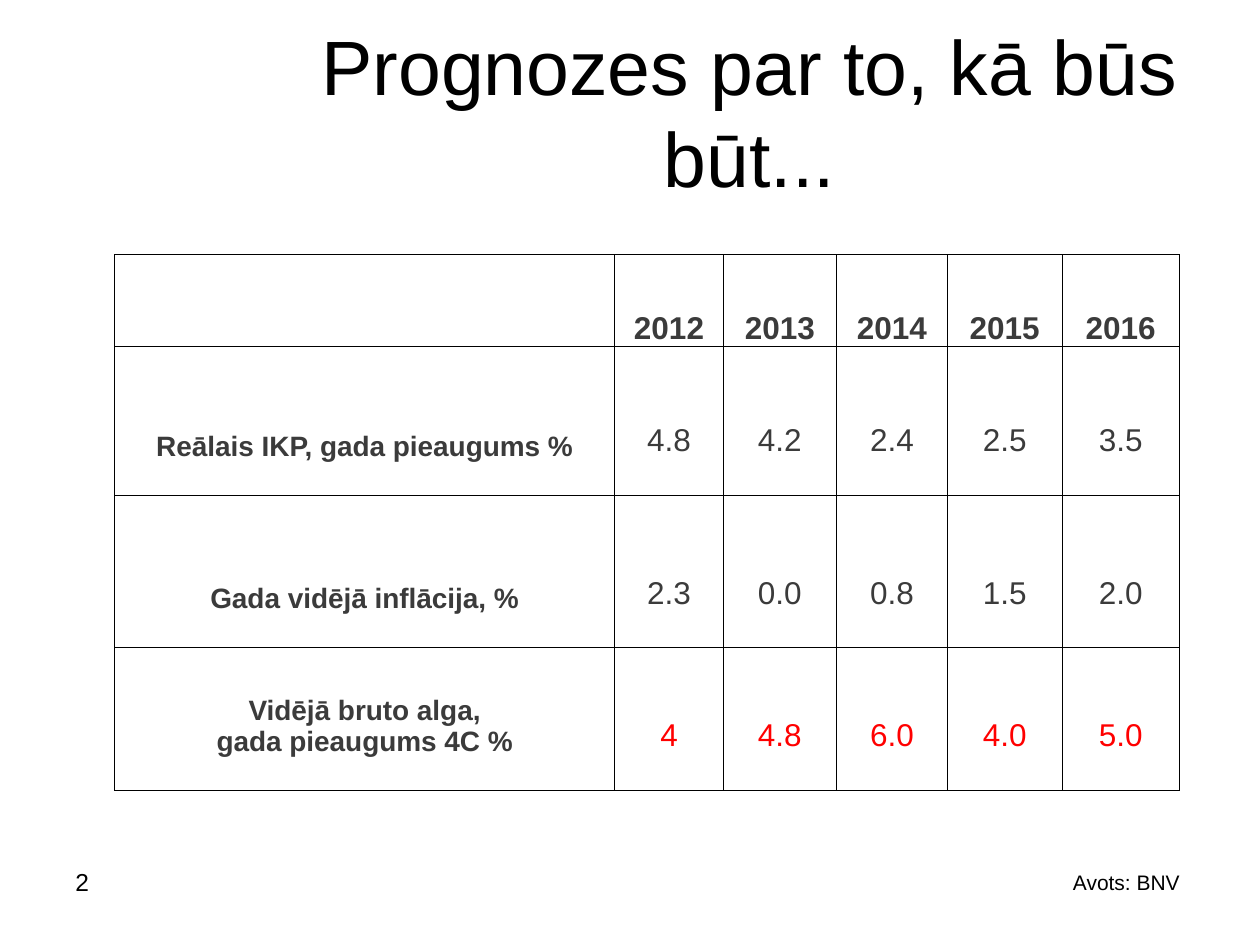
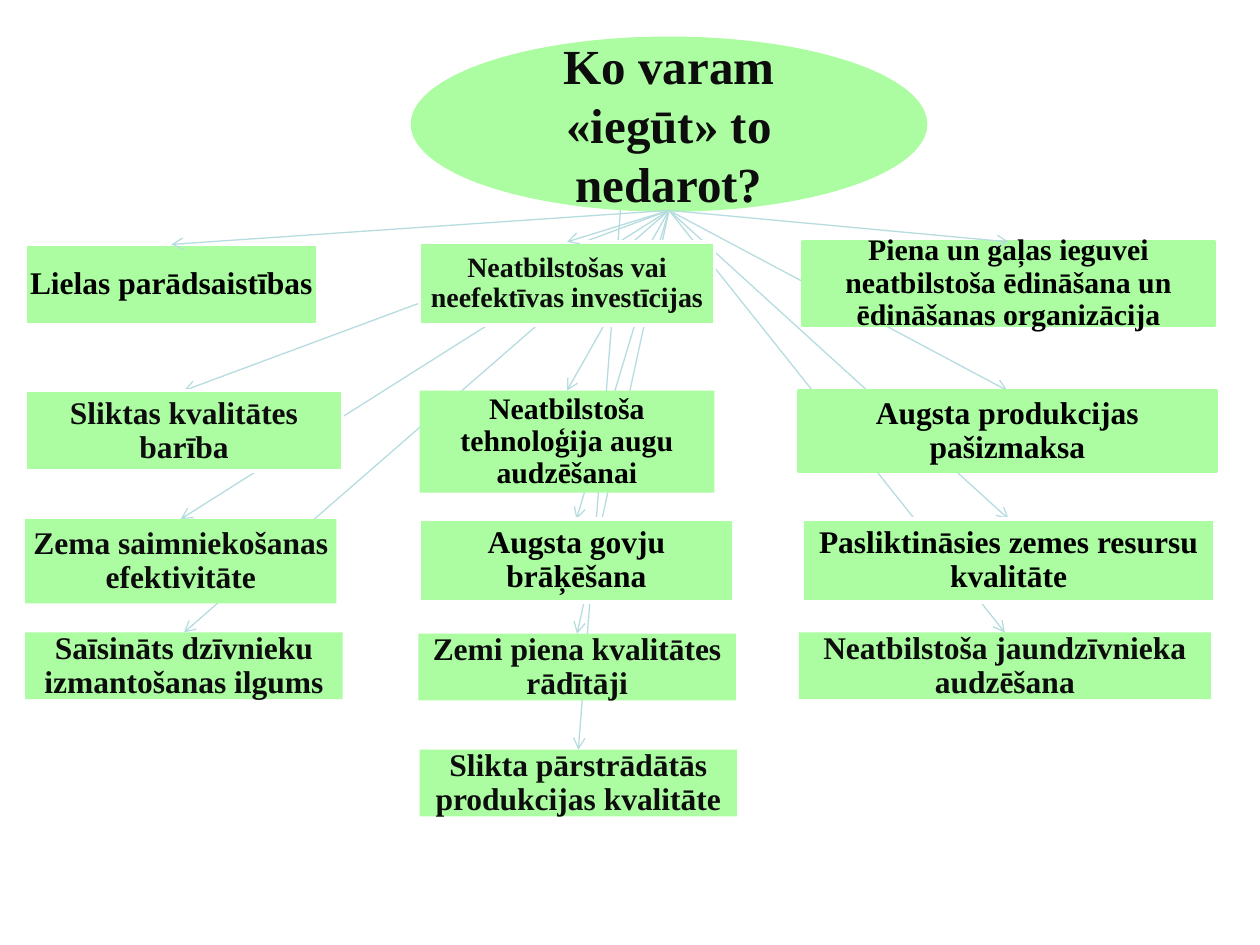
from dataclasses import dataclass

import pptx
import pptx.dml.color
import pptx.enum.shapes
import pptx.enum.text
import pptx.oxml
import pptx.oxml.ns
import pptx.util
from pptx.util import Inches

COLORS = {
    "black": "000000",
    "ink": "0D0D0D",
    "table_text": "3B3B3B",
    "highlight": "FF0000",
    "card": "ACFDA1",
    "arrow": "B6DCDF",
    "white": "FFFFFF",
}
SANS, SERIF = "Arial", "Times New Roman"
CENTER = pptx.enum.text.PP_ALIGN.CENTER
MIDDLE = pptx.enum.text.MSO_ANCHOR.MIDDLE
BOTTOM = pptx.enum.text.MSO_ANCHOR.BOTTOM
SHAPES = pptx.enum.shapes.MSO_SHAPE


@dataclass
class TextStyle:
    size: float
    color: str = "black"
    font: str = SANS
    bold: bool = False


@dataclass
class Card:
    text: str
    left: float
    top: float
    width: float
    height: float
    size: float = 18
    color: str = "black"
    border: str = ""
    arrow_start: tuple[float, float] = (5.31, 1.67)


YEARS = ["2012", "2013", "2014", "2015", "2016"]
FORECASTS = [
    ("Reālais IKP, gada pieaugums %", ["4.8", "4.2", "2.4", "2.5", "3.5"]),
    ("Gada vidējā inflācija, %", ["2.3", "0.0", "0.8", "1.5", "2.0"]),
    ("Vidējā bruto alga,\ngada pieaugums 4C\u00a0%", ["4", "4.8", "6.0", "4.0", "5.0"]),
]
COLUMN_WIDTHS = [3.97, 0.86, 0.9, 0.88, 0.91, 0.93]
ROW_HEIGHTS = [0.73, 1.18, 1.21, 1.13]

LEFT, MIDDLE_LEFT, RIGHT = 0.2, 3.33, 6.34
ROWS = [1.92, 3.1, 4.12, 5.02, 5.95]
CARDS = [
    Card("Lielas parādsaistības", LEFT, 1.94, 2.32, 0.64, border="white"),
    Card("Neatbilstošas vai neefektīvas investīcijas",
         MIDDLE_LEFT, ROWS[0], 2.34, 0.66, 16, "ink", "white"),
    Card("Piena un gaļas ieguvei neatbilstoša ēdināšana un ēdināšanas organizācija",
         6.37, ROWS[0], 3.27, 0.66, 17, border="card"),
    Card("Sliktas kvalitātes barība", LEFT, ROWS[1], 2.52, 0.64, 18, "ink", "white"),
    Card("Neatbilstoša tehnoloģija augu audzēšanai",
         MIDDLE_LEFT, ROWS[1], 2.34, 0.81, 17),
    Card("Augsta produkcijas pašizmaksa", RIGHT, ROWS[1], 3.31, 0.64, border="card"),
    Card("Zema saimniekošanas efektivitāte", LEFT, ROWS[2], 2.47, 0.67, 18, "ink"),
    Card("Augsta govju brāķēšana", MIDDLE_LEFT, ROWS[2], 2.49, 0.66, border="white"),
    Card("Pasliktināsies zemes resursu kvalitāte",
         6.37, ROWS[2], 3.27, 0.66, border="white"),
    Card("Saīsināts dzīvnieku izmantošanas ilgums", LEFT, ROWS[3], 2.52, 0.53, 18, "ink"),
    Card("Zemi piena kvalitātes rādītāji", 3.32, 5.03, 2.52, 0.53, 18, "ink"),
    Card("Neatbilstoša jaundzīvnieka audzēšana", RIGHT, ROWS[3], 3.27, 0.53, 18, "ink"),
    Card("Slikta pārstrādātās produkcijas kvalitāte",
         MIDDLE_LEFT, ROWS[4], 2.52, 0.53, 18, "ink", arrow_start=(4.94, 1.47)),
]


def rgb(name: str) -> pptx.dml.color.RGBColor:
    return pptx.dml.color.RGBColor.from_string(COLORS[name])


def write(text_frame, text: str, style: TextStyle, alignment=CENTER, spacing=None) -> None:
    """Put each line of text in its own paragraph."""
    text_frame.word_wrap = True
    for index, line in enumerate(text.split("\n")):
        paragraph = text_frame.add_paragraph() if index else text_frame.paragraphs[0]
        paragraph.alignment = alignment
        if spacing:
            paragraph.line_spacing = spacing
        run = paragraph.add_run()
        run.text = line
        run.font.name = style.font
        run.font.size = pptx.util.Pt(style.size)
        run.font.bold = style.bold
        run.font.color.rgb = rgb(style.color)


def add_label(slide, box: tuple, text: str, size: float, alignment) -> None:
    label = slide.shapes.add_textbox(*map(Inches, box))
    write(label.text_frame, text, TextStyle(size), alignment)


def add_filled_shape(slide, kind, box: tuple, border: str = ""):
    shape = slide.shapes.add_shape(kind, *map(Inches, box))
    shape.shadow.inherit = False
    shape.fill.solid()
    shape.fill.fore_color.rgb = rgb("card")
    if border:
        shape.line.color.rgb = rgb(border)
        shape.line.width = pptx.util.Pt(2)
    else:
        shape.line.fill.background()
    shape.text_frame.vertical_anchor = MIDDLE
    return shape


def add_card(slide, card: Card) -> None:
    box = (card.left, card.top, card.width, card.height)
    shape = add_filled_shape(slide, SHAPES.RECTANGLE, box, card.border)
    frame = shape.text_frame
    frame.margin_left = frame.margin_right = Inches(0.01)
    frame.margin_top = frame.margin_bottom = Inches(0.01)
    write(frame, card.text, TextStyle(card.size, card.color, SERIF, True), spacing=0.9)


def add_arrow(slide, card: Card) -> None:
    """Point at the middle of the card's top edge."""
    end = (card.left + card.width / 2, card.top)
    connector = slide.shapes.add_connector(
        pptx.enum.shapes.MSO_CONNECTOR.STRAIGHT, *map(Inches, card.arrow_start + end))
    connector.line.color.rgb = rgb("arrow")
    connector.line.width = pptx.util.Pt(0.75)
    properties = connector.element.spPr
    tail = pptx.oxml.parse_xml(f'<a:tailEnd {pptx.oxml.ns.nsdecls("a")} type="arrow"/>')
    properties.find(pptx.oxml.ns.qn("a:ln")).append(tail)
    properties.append(pptx.oxml.parse_xml(f'<a:effectLst {pptx.oxml.ns.nsdecls("a")}/>'))


def format_cell(cell, text: str, style: TextStyle, gap_below: float) -> None:
    for side in "LRTB":
        cell._tc.get_or_add_tcPr().append(pptx.oxml.parse_xml(
            f'<a:ln{side} {pptx.oxml.ns.nsdecls("a")} w="6350"><a:solidFill>'
            f'<a:srgbClr val="{COLORS["black"]}"/></a:solidFill></a:ln{side}>'))
    cell.fill.background()
    cell.vertical_anchor = BOTTOM
    cell.margin_left = cell.margin_right = cell.margin_top = Inches(0.01)
    cell.margin_bottom = Inches(gap_below)
    if text:
        write(cell.text_frame, text, style)


def add_forecast_table(slide) -> None:
    rows = [("", YEARS), *FORECASTS]
    table = slide.shapes.add_table(
        len(rows), len(COLUMN_WIDTHS), Inches(0.91), Inches(2.02),
        Inches(sum(COLUMN_WIDTHS)), Inches(sum(ROW_HEIGHTS))).table
    table.first_row = table.horz_banding = False
    for column, width in zip(table.columns, COLUMN_WIDTHS):
        column.width = Inches(width)
    for row, height in zip(table.rows, ROW_HEIGHTS):
        row.height = Inches(height)
    label_style = TextStyle(16, "table_text", bold=True)
    for row_index, (label, values) in enumerate(rows):
        is_header, is_last = row_index == 0, row_index == len(rows) - 1
        value_style = TextStyle(18, "highlight" if is_last else "table_text", bold=is_header)
        format_cell(table.cell(row_index, 0), label, label_style, 0 if is_header else 0.26)
        for column_index, value in enumerate(values, start=1):
            format_cell(table.cell(row_index, column_index), value, value_style,
                        0 if is_header else 0.29)


def build_forecast_slide(presentation) -> None:
    slide = presentation.slides.add_slide(presentation.slide_layouts[5])
    title = slide.shapes.title
    title.left, title.top, title.width, title.height = map(Inches, (2.4, 0.13, 7.1, 1.5))
    title.text_frame.auto_size = pptx.enum.text.MSO_AUTO_SIZE.NONE
    title.text_frame.vertical_anchor = MIDDLE
    write(title.text_frame, "Prognozes par to, kā būs būt...", TextStyle(44))
    add_label(slide, (0.5, 6.83, 2.33, 0.52), "2", 14, pptx.enum.text.PP_ALIGN.LEFT)
    add_forecast_table(slide)
    add_label(slide, (8.09, 6.85, 1.7, 0.3), "Avots: BNV", 12, CENTER)


def build_causes_slide(presentation) -> None:
    slide = presentation.slides.add_slide(presentation.slide_layouts[6])
    top_cards, lower_cards = CARDS[:3], CARDS[3:]
    for card in lower_cards:
        add_arrow(slide, card)
    question = add_filled_shape(slide, SHAPES.OVAL, (3.26, 0.29, 4.1, 1.39))
    write(question.text_frame, "Ko varam «iegūt» to nedarot?",
          TextStyle(28, "ink", SERIF, True))
    for card in CARDS:
        add_card(slide, card)
    for card in top_cards:
        add_arrow(slide, card)


def main() -> None:
    presentation = pptx.Presentation()
    presentation.slide_width, presentation.slide_height = Inches(10), Inches(7.5)
    build_forecast_slide(presentation)
    build_causes_slide(presentation)
    presentation.save("out.pptx")


if __name__ == "__main__":
    main()
